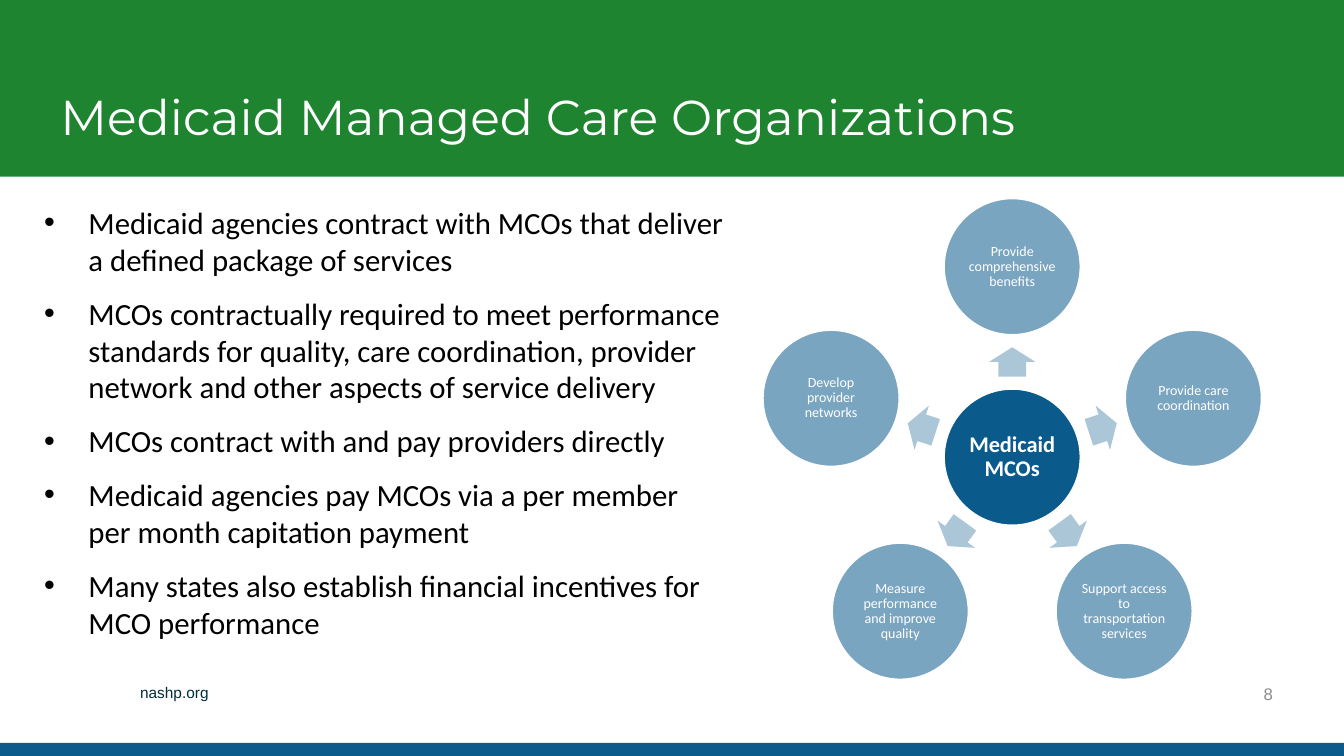
"""Build a slide on Medicaid managed care organizations with a radial diagram."""
import math

from lxml import etree
from pptx import Presentation
from pptx import util as u
from pptx.dml.color import RGBColor
from pptx.enum import shapes, text
from pptx.oxml import ns

GREEN, BLUE, WHITE, BLACK = "1F842F", "0A5A8C", "FFFFFF", "000000"
HUB_X, HUB_Y = 25.51, 11.52
CIRCLE, RING = 3.43, 4.8
ARROW_W, ARROW_H, ARROW_RING = 0.74, 1.17, 2.4

BULLETS = [
    "Medicaid agencies contract with MCOs that deliver a defined package of services\u00a0",
    "MCOs contractually required to meet performance standards for quality, "
    "care coordination, provider network and other aspects of service delivery",
    "MCOs contract with and pay providers directly",
    "Medicaid agencies pay MCOs via a per member per month capitation payment",
    "Many states also establish financial incentives for MCO performance",
]
ROLES = [
    "Provide comprehensive benefits",
    "Provide care coordination",
    "Support access to transportation services",
    "Measure performance and improve quality",
    "Develop provider networks",
]


def rgb(value):
    return RGBColor.from_string(value)


def sub(parent, tag, **attrs):
    return etree.SubElement(parent, ns.qn(tag), **attrs)


class Deck:
    def __init__(self):
        self.prs = Presentation()
        self.prs.slide_width, self.prs.slide_height = u.Cm(33.87), u.Cm(19.05)
        self.s = self.prs.slides.add_slide(self.prs.slide_layouts[1])

    def place(self, sp, x, y, w, h):
        sp.left, sp.top, sp.width, sp.height = map(u.Cm, (x, y, w, h))

    def frame(self, tf, anchor, margins):
        tf.word_wrap = True
        tf.auto_size = text.MSO_AUTO_SIZE.NONE
        tf.vertical_anchor = anchor
        (tf.margin_left, tf.margin_top,
         tf.margin_right, tf.margin_bottom) = map(u.Cm, margins)

    def style(self, p, size, color, name="Calibri", bold=False,
              align=text.PP_ALIGN.LEFT, spacing=None):
        p.alignment = align
        p.line_spacing = spacing
        f = p.font
        f.size, f.name, f.bold = u.Pt(size), name, bold
        f.color.rgb = rgb(color)

    def shape(self, kind, x, y, w, h, fill, alpha=100, line=None):
        sp = self.s.shapes.add_shape(kind, *map(u.Cm, (x, y, w, h)))
        sp.shadow.inherit = False
        sp.fill.solid()
        sp.fill.fore_color.rgb = rgb(fill)
        if alpha < 100:
            clr = sp.fill._xPr.find(ns.qn("a:solidFill"))[0]
            sub(clr, "a:alpha", val=str(alpha * 1000))
        if line:
            sp.line.color.rgb = rgb(line)
            sp.line.width = u.Pt(1)
        else:
            sp.line.fill.background()
        return sp

    def band(self, y, h, fill):
        sp = self.shape(shapes.MSO_SHAPE.RECTANGLE, 0, y, 33.87, h, fill)
        self.s.shapes._spTree.insert(2, sp._element)

    def title(self, words):
        sp = self.s.shapes.title
        self.place(sp, 1.52, 0.56, 30.84, 3.25)
        self.frame(sp.text_frame, text.MSO_ANCHOR.BOTTOM, (0, 0.13, 0.25, 0.13))
        sp.text_frame.text = words
        self.style(sp.text_frame.paragraphs[0], 35, WHITE, "Montserrat", spacing=0.9)

    def bullets(self, items):
        sp = self.s.placeholders[1]
        self.place(sp, 0.86, 5, 17.65, 10.97)
        tf = sp.text_frame
        self.frame(tf, text.MSO_ANCHOR.TOP, (0.25, 0.13, 0.25, 0.13))
        for i, item in enumerate(items):
            p = tf.paragraphs[0] if i == 0 else tf.add_paragraph()
            p.text = item
            pPr = p._p.get_or_add_pPr()
            pPr.set("marL", str(u.Cm(1.12)))
            pPr.set("indent", str(-u.Cm(1.12)))
            sub(sub(pPr, "a:buClr"), "a:srgbClr", val=BLACK)
            sub(pPr, "a:buFont", typeface="Arial")
            sub(pPr, "a:buChar", char="•")
            self.style(p, 22, BLACK)
            p.space_before, p.space_after = u.Pt(4 if i else 0), u.Pt(8)

    def label(self, words, x, y, w, h, size, color, align, anchor):
        sp = self.s.shapes.add_textbox(*map(u.Cm, (x, y, w, h)))
        self.frame(sp.text_frame, anchor, (0.25, 0.13, 0.25, 0.13))
        p = sp.text_frame.paragraphs[0]
        p.text = words
        self.style(p, size, color, "Arial", align=align)

    def circle(self, words, cx, cy, size, alpha=100, bold=False):
        sp = self.shape(shapes.MSO_SHAPE.OVAL, cx - CIRCLE / 2, cy - CIRCLE / 2,
                        CIRCLE, CIRCLE, BLUE, alpha, WHITE)
        self.frame(sp.text_frame, text.MSO_ANCHOR.MIDDLE, (0.03,) * 4)
        p = sp.text_frame.paragraphs[0]
        p.text = words
        self.style(p, size, WHITE, bold=bold, align=text.PP_ALIGN.CENTER, spacing=0.9)

    def arrow(self, cx, cy, angle):
        sp = self.shape(shapes.MSO_SHAPE.RIGHT_ARROW, cx - ARROW_W / 2,
                        cy - ARROW_H / 2, ARROW_W, ARROW_H, BLUE, 34)
        sp.adjustments[0], sp.adjustments[1] = 0.6, 0.5
        sp.rotation = angle % 360

    def wheel(self, hub, roles):
        self.circle(hub, HUB_X, HUB_Y, 16, bold=True)
        for i, role in enumerate(roles):
            angle = -90 + i * 360 / len(roles)
            dx, dy = math.cos(math.radians(angle)), math.sin(math.radians(angle))
            self.arrow(HUB_X + ARROW_RING * dx, HUB_Y + ARROW_RING * dy, angle)
            self.circle(role, HUB_X + RING * dx, HUB_Y + RING * dy, 10, 54)


def main():
    d = Deck()
    d.band(0, 4.45, GREEN)
    d.band(18.72, 0.33, BLUE)
    d.title("Medicaid Managed Care Organizations")
    d.bullets(BULLETS)
    d.label("nashp.org", 3.28, 17.09, 15.93, 0.74, 11, "002E3B",
            text.PP_ALIGN.LEFT, text.MSO_ANCHOR.TOP)
    d.label("8", 24.56, 16.97, 7.77, 1.02, 12, "8C8C8C",
            text.PP_ALIGN.RIGHT, text.MSO_ANCHOR.MIDDLE)
    d.wheel("Medicaid MCOs", ROLES)
    d.prs.save("out.pptx")


if __name__ == "__main__":
    main()
